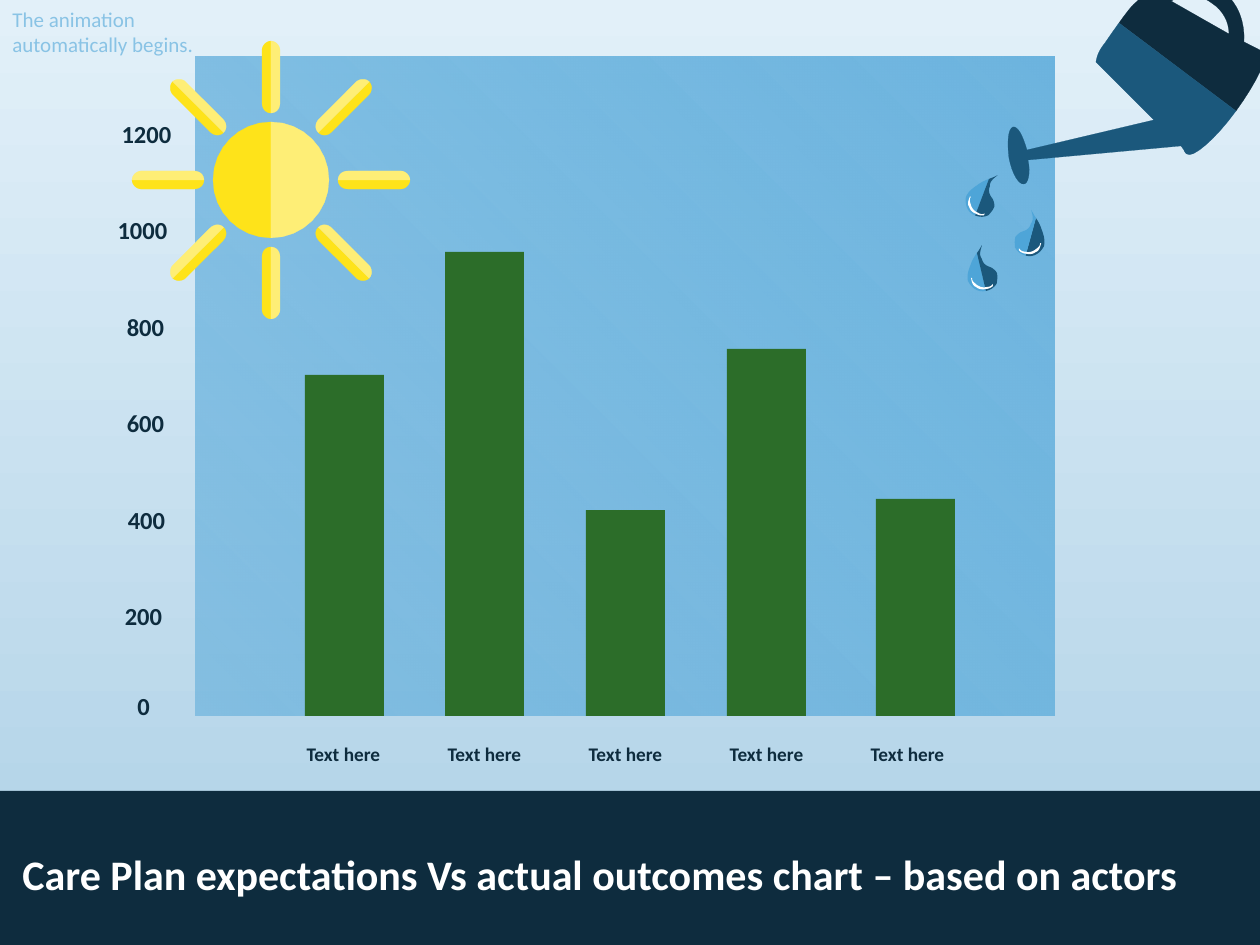
from dataclasses import dataclass
from itertools import product
from math import cos, radians, sin

from lxml import etree
from pptx import Presentation
from pptx.dml.color import RGBColor
from pptx.enum.shapes import MSO_SHAPE
from pptx.enum.text import MSO_AUTO_SIZE, PP_ALIGN
from pptx.oxml.ns import qn
from pptx.util import Emu, Pt

RECTANGLE = MSO_SHAPE.RECTANGLE
GROW = MSO_AUTO_SIZE.SHAPE_TO_FIT_TEXT
LEFT, CENTER = PP_ALIGN.LEFT, PP_ALIGN.CENTER
EMU_PER_PX = 914400 / 126
CURVE_STEPS = 8


@dataclass(frozen=True)
class Theme:
    """Colours and type sizes of the slide."""
    font: str = "Calibri"
    navy: str = "0E2C3E"
    steel: str = "1B587C"
    sky: str = "4EA5D8"
    panel_end: str = "6CB4DF"
    air_top: str = "E2F0F9"
    air_bottom: str = "AED1E6"
    hint: str = "89C3E5"
    green: str = "2C6D29"
    yellow: str = "FEE31A"
    pale_yellow: str = "FEEE76"
    white: str = "FFFFFF"
    title_size: int = 24
    axis_size: int = 14
    hint_size: int = 12
    category_size: int = 11


THEME = Theme()

AXIS_LABELS = [
    ("0", 93, 685), ("200", 93, 595), ("400", 96, 499), ("600", 95, 402),
    ("800", 95, 306), ("1000", 92, 209), ("1200", 96, 113),
]
BARS = [(305, 341), (445, 464), (586, 206), (727, 367), (876, 217)]
BAR_WIDTH, BASELINE = 79, 716

# A contour is a start point, then line ends (x, y) or cubic curves (six numbers).
RAY_HALF = [(67, 0), (67, 5, 71, 9, 77, 9), (130, 9), (134, 9, 139, 5, 139, 0)]
DISC_HALF = [(-58, 0), (-58, 32, -32, 58, 0, 58), (32, 58, 58, 32, 58, 0)]
CAN_BODY = [
    (1134, 4), (1140, -1, 1144, -6, 1149, -10), (1155, -6),
    (1174, -23, 1202, -24, 1222, -9), (1239, 3, 1245, 23, 1244, 42),
    (1260, 50), (1264, 50), (1270, 55, 1257, 82, 1236, 111), (1119, 23),
    (1124, 16, 1129, 9, 1134, 4),
]
HANDLE_HOLE = [(1229, 34), (1229, 21, 1222, 10, 1213, 4), (1201, -6, 1184, -6, 1171, 1)]
CAN_SPOUT = [
    (1009, 158), (1007, 142, 1008, 129, 1013, 127), (1018, 126, 1023, 136, 1027, 150),
    (1154, 120), (1096, 62), (1097, 55, 1100, 49, 1105, 43),
    (1109, 37, 1114, 30, 1119, 23), (1236, 111),
    (1215, 140, 1192, 159, 1187, 154), (1186, 154, 1184, 151, 1184, 150),
    (1181, 146), (1028, 160), (1031, 173, 1028, 184, 1024, 184),
    (1019, 185, 1012, 174, 1009, 158),
]
DROP_OUTER = [
    (0, 0), (-3, 4, -5, 8, -6, 11), (-9, 18, -10, 23, -9, 28), (-6, 34, 0, 40, 9, 38),
]
DROP_TIP = [
    (9, 38), (14, 37, 18, 34, 20, 30), (20, 28, 21, 24, 20, 20),
    (19, 18, 16, 15, 13, 14), (10, 13, 6, 11, 5, 6), (1, 1, 5, -6, 5, -8),
    (5, -8, 3, -4, 0, 0),
]
DROP_GLINT = [
    (-6, 25), (-5, 30, -4, 33, -1, 34), (1, 36, 5, 37, 9, 36),
    (11, 36, 14, 35, 16, 33), (16, 31), (14, 33, 13, 34, 10, 34),
    (6, 35, 3, 34, 0, 32), (-2, 30, -5, 29, -5, 25),
]


def px(length):
    """Turn px into EMU."""
    return Emu(round(length * EMU_PER_PX))


def flatten(contour):
    """Return the points of a contour with its curves sampled."""
    points = [contour[0]]
    for step in contour[1:]:
        if len(step) == 2:
            points.append(step)
            continue
        controls = [points[-1], step[:2], step[2:4], step[4:]]
        for index in range(1, CURVE_STEPS + 1):
            t = index / CURVE_STEPS
            weights = ((1 - t) ** 3, 3 * t * (1 - t) ** 2, 3 * t * t * (1 - t), t ** 3)
            points.append(tuple(
                sum(weight * control[axis] for weight, control in zip(weights, controls))
                for axis in (0, 1)))
    return points


def place(point, origin, angle, flip_x, flip_y):
    """Flip, turn and move a point, giving EMU."""
    x, y, turn = point[0] * flip_x, point[1] * flip_y, radians(angle)
    return (px(origin[0] + x * cos(turn) - y * sin(turn)),
            px(origin[1] + x * sin(turn) + y * cos(turn)))


def paint(shape, color, outlined=False):
    """Give a shape a flat fill and an optional hairline of that colour."""
    shape.shadow.inherit = False
    shape.fill.solid()
    shape.fill.fore_color.rgb = RGBColor.from_string(color)
    if outlined:
        shape.line.color.rgb = RGBColor.from_string(color)
        shape.line.width = Pt(0.1)
    else:
        shape.line.fill.background()


def paint_gradient(fill, colors, angle):
    """Set a two-colour linear gradient."""
    fill.gradient()
    fill.gradient_angle = angle
    for stop, color in zip(fill.gradient_stops, colors):
        stop.color.rgb = RGBColor.from_string(color)


def add_outline(slide, contours, color, outlined=True, origin=(0, 0), angle=0,
                flip_x=1, flip_y=1):
    """Add a freeform made of closed contours."""
    builder = None
    for contour in contours:
        points = [place(point, origin, angle, flip_x, flip_y) for point in flatten(contour)]
        if builder is None:
            builder = slide.shapes.build_freeform(*points[0])
        else:
            builder.move_to(*points[0])
        builder.add_line_segments(points[1:], close=True)
    shape = builder.convert_to_shape()
    paint(shape, color, outlined)
    return shape


def add_rectangle(slide, left, top, width, height, color):
    """Add a plain rectangle."""
    shape = slide.shapes.add_shape(RECTANGLE, px(left), px(top), px(width), px(height))
    paint(shape, color)
    return shape


def add_text(slide, box, lines, size, color, bold=True, alignment=CENTER):
    """Add a text box with one paragraph per line."""
    frame = slide.shapes.add_textbox(*map(px, box)).text_frame
    frame.word_wrap = True
    frame.auto_size = GROW
    frame.text = "\n".join(lines)
    for paragraph in frame.paragraphs:
        paragraph.alignment = alignment
        paragraph.font.name = THEME.font
        paragraph.font.size = Pt(size)
        paragraph.font.bold = bold
        paragraph.font.color.rgb = RGBColor.from_string(color)


def add_panel(slide):
    """Add the half-transparent plot background."""
    panel = add_rectangle(slide, 196, 57, 859, 659, THEME.sky)
    paint_gradient(panel.fill, (THEME.sky, THEME.panel_end), 45)
    first_color = next(panel.element.iter(qn("a:srgbClr")))
    etree.SubElement(first_color, qn("a:alpha"), val="50000")


def add_sun(slide):
    """Add the two-tone sun with eight rays."""
    center, tones = (271, 180), ((1, THEME.yellow), (-1, THEME.pale_yellow))
    parts = [add_outline(slide, [RAY_HALF], color, True, center, angle, end, side)
             for angle, end, (side, color) in product((-45, 0, 45, 90), (-1, 1), tones)]
    parts += [add_outline(slide, [DISC_HALF], color, True, center, 90, 1, side)
              for side, color in tones]
    slide.shapes.add_group_shape(parts)


def add_watering_can(slide):
    """Add the watering can."""
    slide.shapes.add_group_shape([
        add_outline(slide, [CAN_BODY, HANDLE_HOLE], THEME.navy),
        add_outline(slide, [CAN_SPOUT], THEME.steel)])


def add_drop(slide, origin, angle, flip_x, outer, tip):
    """Add one water drop."""
    layers = ((DROP_OUTER, outer), (DROP_TIP, tip), (DROP_GLINT, THEME.white))
    return [add_outline(slide, [contour], color, False, origin, angle, flip_x)
            for contour, color in layers]


def main():
    """Build the slide and save it."""
    presentation = Presentation()
    presentation.slide_width, presentation.slide_height = px(1260), px(945)
    slide = presentation.slides.add_slide(presentation.slide_layouts[6])
    paint_gradient(slide.background.fill, (THEME.air_top, THEME.air_bottom), 270)
    add_panel(slide)
    add_sun(slide)
    for label, left, top in AXIS_LABELS:
        add_text(slide, (left, top, 101, 43), [label], THEME.axis_size, THEME.navy)
    add_rectangle(slide, 0, 791, 1260, 154, THEME.navy)
    for index in range(len(BARS)):
        add_text(slide, (280 + 141 * index, 736, 127, 37), ["Text here"],
                 THEME.category_size, THEME.navy)
    add_watering_can(slide)
    slide.shapes.add_group_shape(
        add_drop(slide, (1036, 218), 2, -1, THEME.steel, THEME.sky)
        + add_drop(slide, (989, 179), 34, 1, THEME.sky, THEME.steel)
        + add_drop(slide, (977, 253), 0, 1, THEME.sky, THEME.steel))
    for left, height in BARS:
        add_rectangle(slide, left, BASELINE - height, BAR_WIDTH, height, THEME.green)
    add_text(slide, (10, 842, 1227, 63),
             ["Care Plan expectations Vs actual outcomes chart – based on actors"],
             THEME.title_size, THEME.white, alignment=LEFT)
    add_text(slide, (0, 0, 268, 63), ["The animation", "automatically begins."],
             THEME.hint_size, THEME.hint, bold=False, alignment=LEFT)
    presentation.save("out.pptx")


if __name__ == "__main__":
    main()
